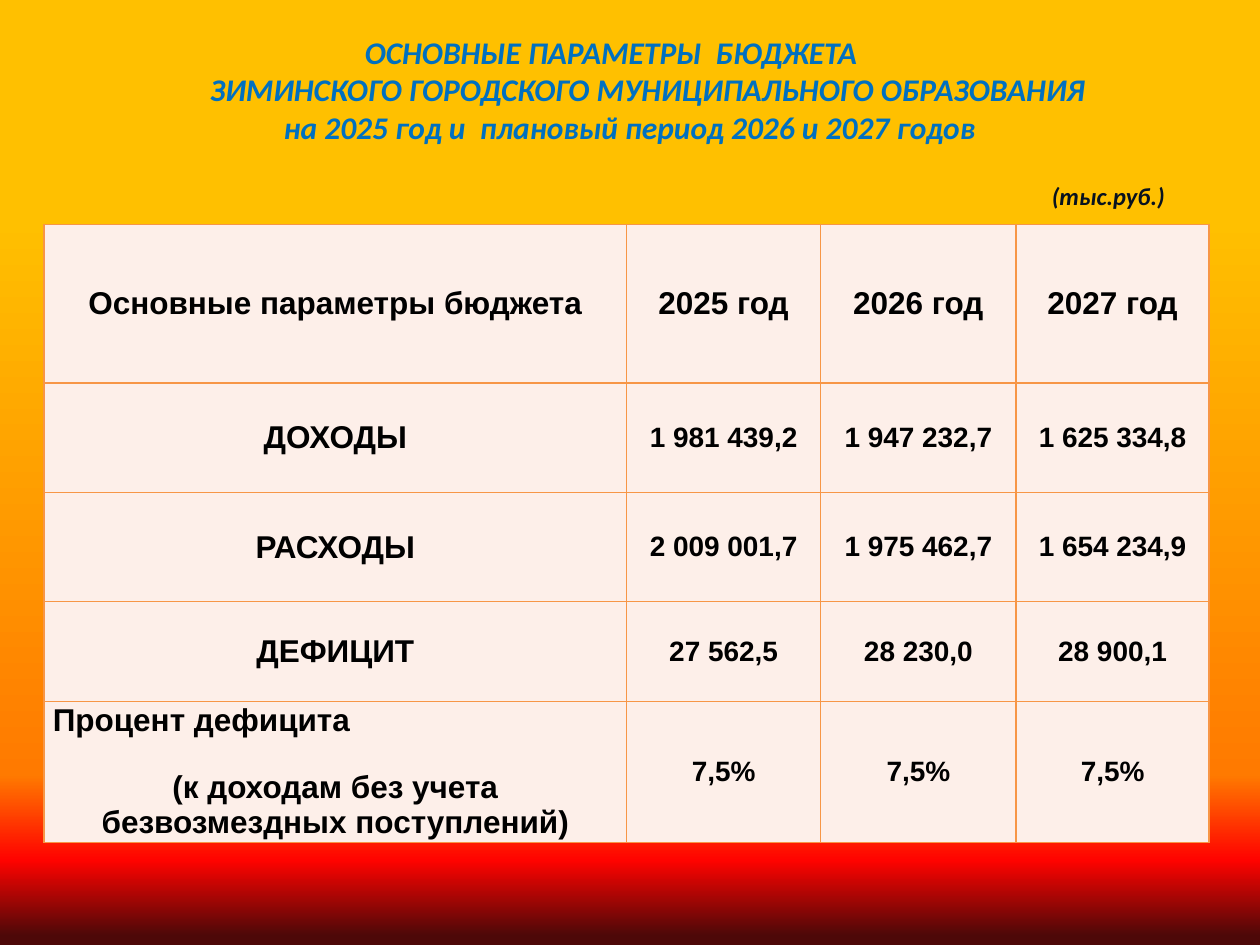
import pptx
import pptx.util
import pptx.dml.color
import pptx.enum.text
import pptx.oxml
import pptx.oxml.ns

Pt = pptx.util.Pt
RGB = pptx.dml.color.RGBColor
ALIGN = pptx.enum.text.PP_ALIGN
MIDDLE = pptx.enum.text.MSO_ANCHOR.MIDDLE

BLACK = RGB(0x00, 0x00, 0x00)
BLUE = RGB(0x00, 0x70, 0xC0)
NAVY = RGB(0x08, 0x12, 0x1F)
CREAM = RGB(0xFD, 0xEF, 0xE9)
ORANGE = RGB(0xF7, 0x96, 0x46)
STOPS = [
    (0, RGB(0xFF, 0xC0, 0x00)),
    (23, RGB(0xFF, 0xC0, 0x00)),
    (82, RGB(0xFF, 0x7A, 0x00)),
    (91, RGB(0xFF, 0x03, 0x00)),
    (99, RGB(0x4D, 0x08, 0x08)),
]

COLS = [332.8, 111, 111.6, 110.4]
ROWS = [90.7, 62.5, 62.5, 57, 80.5]
DATA = [
    ["Основные параметры бюджета", "2025 год", "2026 год", "2027 год"],
    ["ДОХОДЫ", "1 981 439,2", "1 947 232,7", "1 625 334,8"],
    ["РАСХОДЫ", "2 009 001,7", "1 975 462,7", "1 654 234,9"],
    ["ДЕФИЦИТ", "27 562,5", "28 230,0", "28 900,1"],
    ["Процент дефицита\n(к доходам без учета безвозмездных поступлений)",
     "7,5%", "7,5%", "7,5%"],
]
# Title lines with their left indents
TITLE = [
    ("ОСНОВНЫЕ ПАРАМЕТРЫ  БЮДЖЕТА", 0),
    ("ЗИМИНСКОГО ГОРОДСКОГО МУНИЦИПАЛЬНОГО ОБРАЗОВАНИЯ", 42),
    ("на 2025 год и  плановый период 2026 и 2027 годов", 21.6),
]


def parse(tag, attrs, body):
    ns = pptx.oxml.ns.nsdecls("a")
    return pptx.oxml.parse_xml(f"<a:{tag} {ns} {attrs}>{body}</a:{tag}>")


def paint(slide):
    fill = slide.background.fill
    fill.gradient()
    fill.gradient_angle = 270
    stops = "".join(
        f'<a:gs pos="{pos * 1000}"><a:srgbClr val="{color}"/></a:gs>'
        for pos, color in STOPS)
    grad = slide.background._cSld.bg.bgPr.find(pptx.oxml.ns.qn("a:gradFill"))
    grad.replace(grad.gsLst, parse("gsLst", "", stops))


def style(par, face, size, color, italic, align):
    par.alignment = align
    for run in par.runs:
        font = run.font
        font.name, font.size = face, Pt(size)
        font.bold, font.italic = True, italic
        font.color.rgb = color


def add_text(slide, left, top, width, height, lines, size, color, align):
    box = slide.shapes.add_textbox(Pt(left), Pt(top), Pt(width), Pt(height))
    frame = box.text_frame
    frame.word_wrap = True
    frame.text = "\n".join(text for text, _ in lines)
    for par, (_, indent) in zip(frame.paragraphs, lines):
        style(par, "Calibri", size, color, True, align)
        par._p.get_or_add_pPr().set("marL", str(Pt(indent)))


def add_edges(cell):
    props = cell._tc.get_or_add_tcPr()
    line = f'<a:solidFill><a:srgbClr val="{ORANGE}"/></a:solidFill>'
    for spot, side in enumerate(("lnL", "lnR", "lnT", "lnB")):
        props.insert(spot, parse(side, f'w="{Pt(1)}"', line))


def fill_cell(cell, text, size):
    cell.fill.solid()
    cell.fill.fore_color.rgb = CREAM
    cell.vertical_anchor = MIDDLE
    cell.margin_left = cell.margin_right = Pt(5)
    cell.margin_top = cell.margin_bottom = 0
    cell.text_frame.text = text
    for par in cell.text_frame.paragraphs:
        style(par, "Arial", size, BLACK, False, ALIGN.CENTER)
    add_edges(cell)


def add_grid(slide, left, top):
    frame = slide.shapes.add_table(len(ROWS), len(COLS), Pt(left), Pt(top),
                                   Pt(sum(COLS)), Pt(sum(ROWS)))
    table = frame.table
    for col, width in zip(table.columns, COLS):
        col.width = Pt(width)
    for row, height in zip(table.rows, ROWS):
        row.height = Pt(height)
    for r, texts in enumerate(DATA):
        for c, text in enumerate(texts):
            fill_cell(table.cell(r, c), text, 18 if r == 0 or c == 0 else 16)
    # The last label starts at the left, with a gap below
    label = table.cell(len(ROWS) - 1, 0).text_frame.paragraphs[0]
    label.alignment = ALIGN.LEFT
    label.space_after = Pt(18)


def main():
    deck = pptx.Presentation()
    deck.slide_width, deck.slide_height = Pt(720), Pt(540)
    slide = deck.slides.add_slide(deck.slide_layouts[6])
    paint(slide)
    # Budget table
    add_grid(slide, 25.2, 128.2)
    # Title and unit
    add_text(slide, 0, 15.1, 698.4, 72.7, TITLE, 18, BLUE, ALIGN.CENTER)
    add_text(slide, 569.5, 100.1, 137.5, 24.5, [("(тыс.руб.)", 24.4)],
             14, NAVY, ALIGN.LEFT)
    deck.save("out.pptx")


if __name__ == "__main__":
    main()
